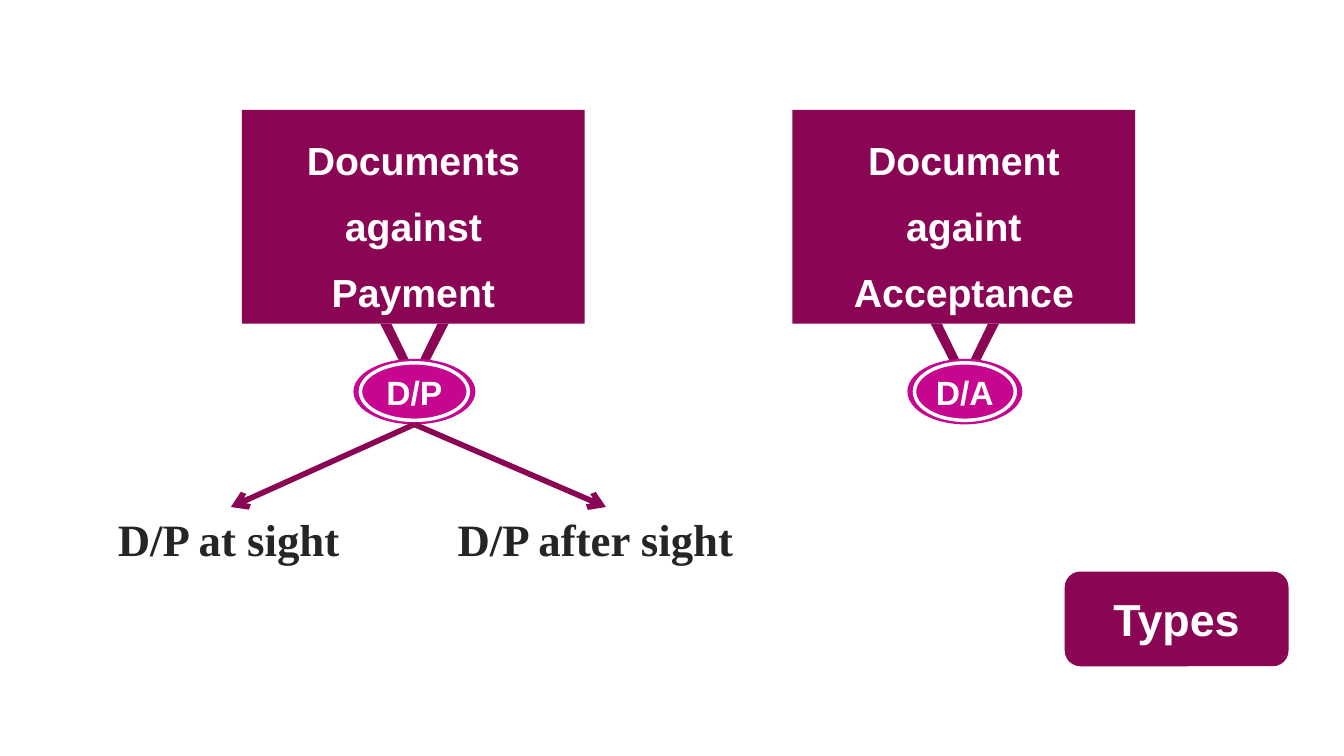
"""Build a slide showing the types of documentary collection."""
from dataclasses import dataclass

from lxml import etree
from pptx import Presentation
from pptx.dml.color import RGBColor
from pptx.enum.shapes import MSO_CONNECTOR, MSO_SHAPE
from pptx.enum.text import MSO_ANCHOR, MSO_AUTO_SIZE, PP_ALIGN
from pptx.oxml.ns import qn
from pptx.shapes.autoshape import Shape
from pptx.slide import Slide
from pptx.util import Inches, Pt

RECT = MSO_SHAPE.RECTANGLE
ROUND = MSO_SHAPE.ROUNDED_RECTANGLE
OVAL = MSO_SHAPE.OVAL
STRAIGHT = MSO_CONNECTOR.STRAIGHT
CENTER, LEFT = PP_ALIGN.CENTER, PP_ALIGN.LEFT
MIDDLE, TOP = MSO_ANCHOR.MIDDLE, MSO_ANCHOR.TOP
GROW = MSO_AUTO_SIZE.SHAPE_TO_FIT_TEXT


@dataclass(frozen=True)
class Theme:
    """Colours, fonts and type sizes."""
    plum: RGBColor = RGBColor(0x8A, 0x05, 0x54)
    pink: RGBColor = RGBColor(0xC7, 0x06, 0x8F)
    white: RGBColor = RGBColor(0xFF, 0xFF, 0xFF)
    ink: RGBColor = RGBColor(0x23, 0x25, 0x26)
    sans: str = "Arial"
    serif: str = "Times New Roman"
    large: int = 32
    box: int = 28
    badge: int = 24


@dataclass(frozen=True)
class Method:
    """A collection method with its badge."""
    words: str
    code: str
    left: float
    badge: float


@dataclass(frozen=True)
class Term:
    """A payment term and the tip of its arrow."""
    text: str
    left: float
    width: float
    tip: float


THEME = Theme()
METHODS = (
    Method("Documents\nagainst\nPayment", "D/P", 2.4, 1.21),
    Method("Document\nagaint\nAcceptance", "D/A", 7.86, 1.14),
)
TERMS = (
    Term("D/P at sight", 1.07, 2.44, 2.29),
    Term("D/P after sight", 4.44, 3.14, 6.01),
)
BOX_TOP, BOX_W, BOX_H = 1.09, 3.4, 2.12
BADGE_TOP, BADGE_H = 3.56, 0.65
AXIS = BOX_W / 2 + 0.01
TERM_TOP, TERM_H = 5.03, 0.64
LEG = ((0.34, 0), (0.23, 0), (0.05, 0.37), (0.12, 0.39), (0.14, 0.39))


def write(shape: Shape, text: str, *, size: int, font: str = THEME.sans,
          color: RGBColor = THEME.white, align: PP_ALIGN = CENTER,
          anchor: MSO_ANCHOR = MIDDLE, spacing: float | None = None,
          wrap: bool = True) -> None:
    """Fill a shape with bold text, one paragraph a line."""
    frame = shape.text_frame
    frame.text = text
    frame.word_wrap = wrap
    frame.vertical_anchor = anchor
    for para in frame.paragraphs:
        para.alignment = align
        if spacing:
            para.line_spacing = spacing
        para.font.name = font
        para.font.size = Pt(size)
        para.font.bold = True
        para.font.color.rgb = color


def paint(shape: Shape, color: RGBColor) -> Shape:
    """Give a shape a flat fill with no line or shadow."""
    shape.shadow.inherit = False
    shape.fill.solid()
    shape.fill.fore_color.rgb = color
    shape.line.fill.background()
    return shape


def block(slide: Slide, kind: MSO_SHAPE, left: float, top: float,
          width: float, height: float, color: RGBColor) -> Shape:
    """Add a flat preset shape."""
    return paint(slide.shapes.add_shape(
        kind, Inches(left), Inches(top), Inches(width), Inches(height)), color)


def legs(slide: Slide, mid: float, top: float) -> None:
    """Draw the mirrored pair of legs under a box."""
    pair = [[(Inches(mid + side * x), Inches(top + y)) for x, y in LEG]
            for side in (1, -1)]
    pen = slide.shapes.build_freeform(*pair[0][0])
    pen.add_line_segments(pair[0][1:])
    pen.move_to(*pair[1][0])
    pen.add_line_segments(pair[1][1:])
    paint(pen.convert_to_shape(), THEME.plum)


def badge(slide: Slide, mid: float, width: float, code: str) -> None:
    """Draw an oval badge with a white inner ring."""
    left = mid - width / 2
    block(slide, OVAL, left, BADGE_TOP, width, BADGE_H, THEME.pink)
    core = block(slide, OVAL, left + 0.07, BADGE_TOP + 0.04,
                 width - 0.14, BADGE_H - 0.08, THEME.pink)
    core.line.color.rgb = THEME.white
    core.line.width = Pt(2.5)
    write(core, code, size=THEME.badge, wrap=False)


def method(slide: Slide, item: Method) -> None:
    """Draw a method box, its legs and its badge."""
    box = block(slide, RECT, item.left, BOX_TOP, BOX_W, BOX_H, THEME.plum)
    write(box, item.words, size=THEME.box, spacing=1.4)
    mid = item.left + AXIS
    legs(slide, mid, BOX_TOP + BOX_H)
    badge(slide, mid, item.badge, item.code)


def term(slide: Slide, item: Term) -> None:
    """Write a payment term."""
    label = slide.shapes.add_textbox(Inches(item.left), Inches(TERM_TOP),
                                     Inches(item.width), Inches(TERM_H))
    write(label, item.text, size=THEME.large, font=THEME.serif,
          color=THEME.ink, align=LEFT, anchor=TOP)
    label.text_frame.auto_size = GROW


def arrow(slide: Slide, start: float, tip: float) -> None:
    """Draw an arrow from a badge to a term."""
    line = slide.shapes.add_connector(
        STRAIGHT, Inches(start), Inches(BADGE_TOP + BADGE_H),
        Inches(tip), Inches(TERM_TOP))
    line.line.color.rgb = THEME.plum
    line.line.width = Pt(4)
    etree.SubElement(line.line._get_or_add_ln(), qn("a:tailEnd"), type="arrow")
    etree.SubElement(line._element.spPr, qn("a:effectLst"))


def main() -> None:
    """Build and save the slide."""
    deck = Presentation()
    deck.slide_width, deck.slide_height = Inches(13.33), Inches(7.5)
    slide = deck.slides.add_slide(deck.slide_layouts[6])
    for item in METHODS:
        method(slide, item)
    for item in TERMS:
        term(slide, item)
    for item in TERMS:
        arrow(slide, METHODS[0].left + AXIS, item.tip)
    types = block(slide, ROUND, 10.56, 5.67, 2.22, 0.94, THEME.plum)
    write(types, "Types", size=THEME.large)
    deck.save("out.pptx")


if __name__ == "__main__":
    main()
